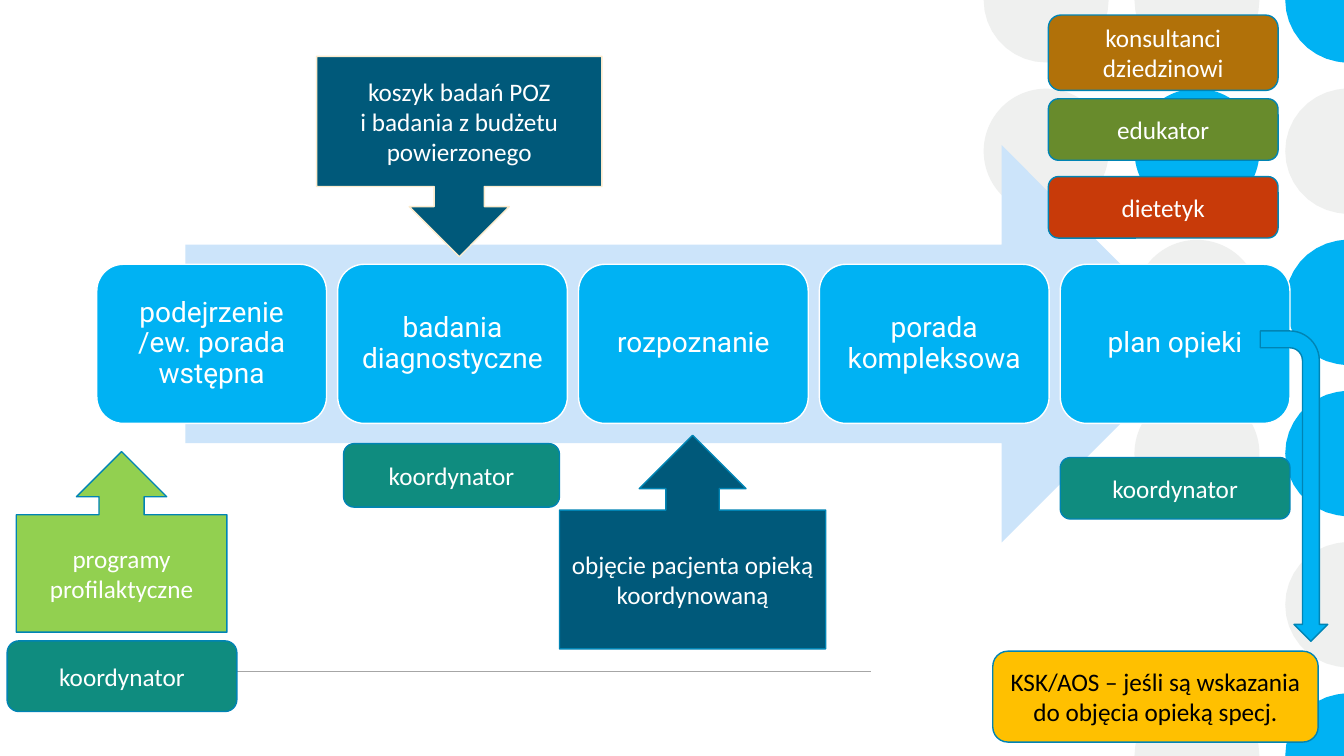
import math
from pptx import Presentation
from pptx import util as u
from pptx.dml import color
from pptx.enum import shapes, text
from pptx.oxml import ns
from lxml import etree

kind = shapes.MSO_SHAPE
wide, high = 33.87, 19.05
blue, grey, navy, teal, rim = "00B2F3", "EFF0EF", "00597A", "0F8C7F", "0084B4"


def tint(fmt, tone):
    fmt.solid()
    fmt.fore_color.rgb = color.RGBColor.from_string(tone)


def block(form, spot, tone, edge=None, words="", ink="FFFFFF", font="Calibri", size=18):
    item = page.shapes.add_shape(form, *[u.Cm(n) for n in spot])
    tint(item.fill, tone)
    item.shadow.inherit = False
    item.line.fill.background()
    if edge:
        tint(item.line.fill, edge)
        item.line.width = u.Pt(1)
    frame = item.text_frame
    frame.word_wrap = True
    frame.vertical_anchor = text.MSO_ANCHOR.MIDDLE
    for n, row in enumerate(words.split("\n") if words else []):
        para = frame.add_paragraph() if n else frame.paragraphs[0]
        para.alignment = text.PP_ALIGN.CENTER
        run = para.add_run()
        run.text = row
        run.font.name = font
        run.font.size = u.Pt(size)
        tint(run.font.fill, ink)
    return item


deck = Presentation()
deck.slide_width, deck.slide_height = u.Cm(wide), u.Cm(high)
page = deck.slides.add_slide(deck.slide_layouts[6])

disc = 3.15
half = disc / 2
for row, marks in enumerate(["ggb", "gbg", " gb", " gb", "  g", " gb"]):
    for col, mark in enumerate(marks):
        if mark == " ":
            continue
        tone = blue if mark == "b" else grey
        left, top = 24.79 + 3.8 * col, 3.81 * row - half
        if row in range(1, 5) and col < 2:
            block(kind.OVAL, (left, top, disc, disc), tone)
            continue
        dots = []
        for turn in range(0, 361, 10):
            x = left + half + half * math.cos(math.radians(turn))
            y = top + half + half * math.sin(math.radians(turn))
            if x < wide + 0.1 and -0.1 < y < high + 0.1:
                dots.append((min(x, wide), min(max(y, 0), high)))
        if col == 2 and row in (0, 5):
            dots.append((wide, high if row else 0))
        dots = [(u.Cm(x), u.Cm(y)) for x, y in dots]
        curve = page.shapes.build_freeform(*dots[0], scale=1.0)
        curve.add_line_segments(dots[1:], close=True)
        part = curve.convert_to_shape()
        tint(part.fill, tone)
        part.line.fill.background()
        part.shadow.inherit = False

rule = page.shapes.add_connector(
    shapes.MSO_CONNECTOR.STRAIGHT, u.Cm(1.58), u.Cm(16.92), u.Cm(21.95), u.Cm(16.92))
tint(rule.line.fill, "A6A6A6")
rule.line.width = u.Pt(1)
etree.SubElement(rule._element.spPr, ns.qn("a:effectLst"))

block(kind.RIGHT_ARROW, (4.67, 3.66, 25.58, 10.01), "CCE4FA")
steps = ["podejrzenie /ew. porada wstępna", "badania diagnostyczne",
         "rozpoznanie", "porada kompleksowa", "plan opieki"]
for n, words in enumerate(steps):
    item = block(kind.ROUNDED_RECTANGLE, (2.44 + 6.07 * n, 6.66, 5.79, 4.01),
                 blue, "FFFFFF", words, font="Roboto", size=20)
    frame = item.text_frame
    frame.margin_left = frame.margin_right = u.Cm(0.2)
    frame.margin_top = frame.margin_bottom = u.Cm(0.2)
    frame.paragraphs[0].line_spacing = 0.9

block(kind.DOWN_ARROW_CALLOUT, (7.98, 1.42, 7.19, 5.05), navy, "FCEBCD",
      "koszyk badań POZ\ni badania z budżetu powierzonego")
block(kind.UP_ARROW_CALLOUT, (14.1, 10.97, 6.71, 5.38), navy, rim,
      "objęcie pacjenta opieką koordynowaną")
block(kind.UP_ARROW_CALLOUT, (0.41, 11.38, 5.31, 4.55), "92D050", rim,
      "programy profilaktyczne")

roles = [
    ((26.72, 11.53, 5.79, 1.55), teal, "koordynator"),
    ((0.18, 16.15, 5.79, 1.78), teal, "koordynator"),
    ((26.42, 0.38, 5.79, 1.9), "B17109", "konsultanci dziedzinowi"),
    ((26.42, 2.49, 5.79, 1.55), "688B2C", "edukator"),
    ((26.42, 4.45, 5.79, 1.55), "C83A09", "dietetyk"),
    ((8.66, 11.18, 5.44, 1.6), teal, "koordynator"),
]
for spot, tone, words in roles:
    block(kind.ROUNDED_RECTANGLE, spot, tone, rim, words)

bend = block(kind.BENT_ARROW, (28.7, 11.4, 7.82, 1.7), blue, rim)
bend.rotation = 90
block(kind.ROUNDED_RECTANGLE, (25.02, 16.41, 8.2, 2.29), "FFC000", rim,
      "KSK/AOS – jeśli są wskazania do objęcia opieką specj.", "000000")

deck.save("out.pptx")
